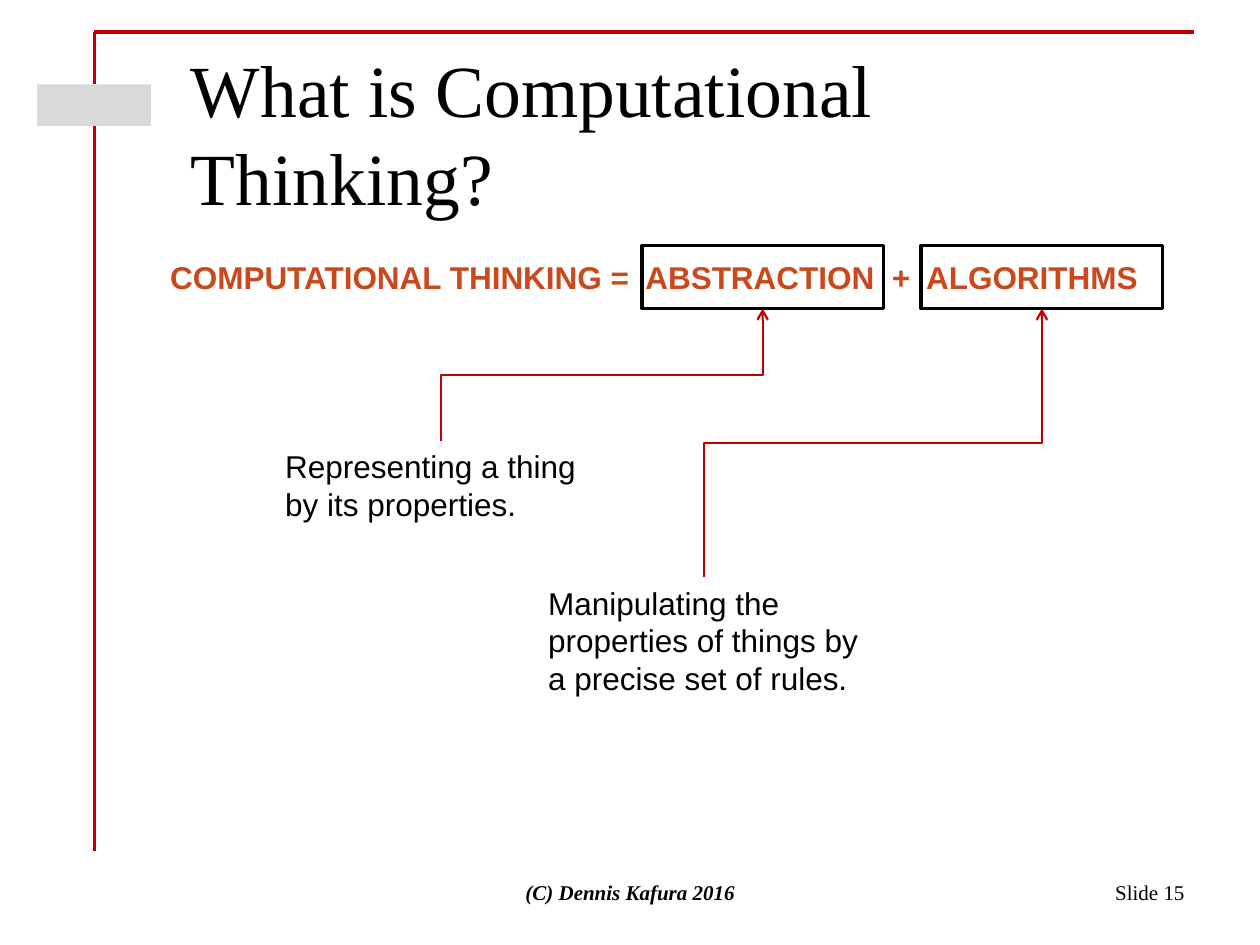
"""Build the slide that defines computational thinking as abstraction plus algorithms."""
from lxml.etree import SubElement
from pptx import Presentation
from pptx.dml.color import RGBColor
from pptx.enum.shapes import MSO_CONNECTOR as Link, MSO_SHAPE as Preset
from pptx.enum.text import MSO_ANCHOR as Anchor, PP_ALIGN as Align
from pptx.oxml.ns import qn
from pptx.util import Cm, Pt

BLACK = RGBColor(0x00, 0x00, 0x00)
RED = RGBColor(0xC0, 0x00, 0x00)
GREY = RGBColor(0xD9, 0xD9, 0xD9)
RUST = RGBColor(0xCA, 0x48, 0x1C)
SANS, SERIF = "Arial", "Times New Roman"

deck = Presentation()
deck.slide_width, deck.slide_height = Cm(25.4), Cm(19.05)
slide = deck.slides.add_slide(deck.slide_layouts[6])


def add_text(text, left, top, width, height, size=18, font=SANS, color=BLACK, bold=False,
             italic=False, align=Align.LEFT, anchor=Anchor.TOP, tabs=()):
    box = slide.shapes.add_textbox(Cm(left), Cm(top), Cm(width), Cm(height))
    frame = box.text_frame
    frame.word_wrap, frame.vertical_anchor = True, anchor
    paragraph = frame.paragraphs[0]
    paragraph.alignment = align
    if tabs:
        stops = SubElement(paragraph._p.get_or_add_pPr(), qn("a:tabLst"))
        for stop in tabs:
            SubElement(stops, qn("a:tab"), pos=str(Cm(stop)), algn="l")
    run = paragraph.add_run()
    run.text = text
    run.font.name, run.font.size = font, Pt(size)
    run.font.color.rgb, run.font.bold, run.font.italic = color, bold, italic


def add_line(kind, x1, y1, x2, y2, weight):
    line = slide.shapes.add_connector(kind, Cm(x1), Cm(y1), Cm(x2), Cm(y2))
    line.line.color.rgb, line.line.width = RED, Pt(weight)
    SubElement(line._element.spPr, qn("a:effectLst"))
    return line


margin_x, rule_y = 1.9, 0.64
gap_top, gap_bottom = 1.7, 2.54
add_line(Link.STRAIGHT, margin_x, rule_y, 24.06, rule_y, 2)
for start_y, end_y in ((rule_y, gap_top), (gap_bottom, 17.15)):
    add_line(Link.STRAIGHT, margin_x, start_y, margin_x, end_y, 1.75)

badge_width = 2.3
badge = slide.shapes.add_shape(Preset.RECTANGLE, Cm(margin_x - badge_width / 2), Cm(gap_top),
                               Cm(badge_width), Cm(gap_bottom - gap_top))
badge.shadow.inherit = False
badge.fill.solid()
badge.fill.fore_color.rgb = GREY
badge.line.fill.background()

add_text("What is Computational Thinking?", 3.6, 0.76, 20.53, 1.98, size=42, font=SERIF)

footer_y, footer_height = 17.35, 1.27
add_text("Slide 15", 18.2, footer_y, 5.93, footer_height, size=12, font=SERIF,
         align=Align.RIGHT, anchor=Anchor.MIDDLE)
add_text("(C) Dennis Kafura 2016", 8.68, footer_y, 8.05, footer_height, size=12, font=SERIF,
         bold=True, italic=True, align=Align.CENTER, anchor=Anchor.MIDDLE)

add_text("COMPUTATIONAL THINKING =\tABSTRACTION\t+\tALGORITHMS", 3.18, 5.08, 20.32, 1.02,
         color=RUST, bold=True, tabs=(9.58, 14.55, 15.24))

term_y, term_width, term_height = 4.95, 4.87, 1.27
note_width = 6.77
definitions = (
    ("Representing a thing by its properties.", 5.5, 8.89, 1.79, 12.94),
    ("Manipulating the properties of things by a precise set of rules.", 10.8, 11.64, 2.57, 18.57),
)
for meaning, note_x, note_y, note_height, term_x in definitions:
    add_text(meaning, note_x, note_y, note_width, note_height)
    term = slide.shapes.add_shape(Preset.RECTANGLE, Cm(term_x), Cm(term_y),
                                  Cm(term_width), Cm(term_height))
    term.shadow.inherit = False
    term.fill.background()
    term.line.color.rgb, term.line.width = BLACK, Pt(2)

    start_x, end_x = note_x + note_width / 2, term_x + term_width / 2
    end_y = term_y + term_height
    rise, run_length = note_y - end_y, end_x - start_x
    mid_x, mid_y = (start_x + end_x) / 2, (note_y + end_y) / 2
    pointer = add_line(Link.ELBOW, mid_x - rise / 2, mid_y - run_length / 2,
                       mid_x + rise / 2, mid_y + run_length / 2, 1.25)
    pointer._element.spPr.find(qn("a:xfrm")).set("rot", str(270 * 60000))
    SubElement(pointer.line._get_or_add_ln(), qn("a:tailEnd"), type="arrow")

deck.save("out.pptx")
